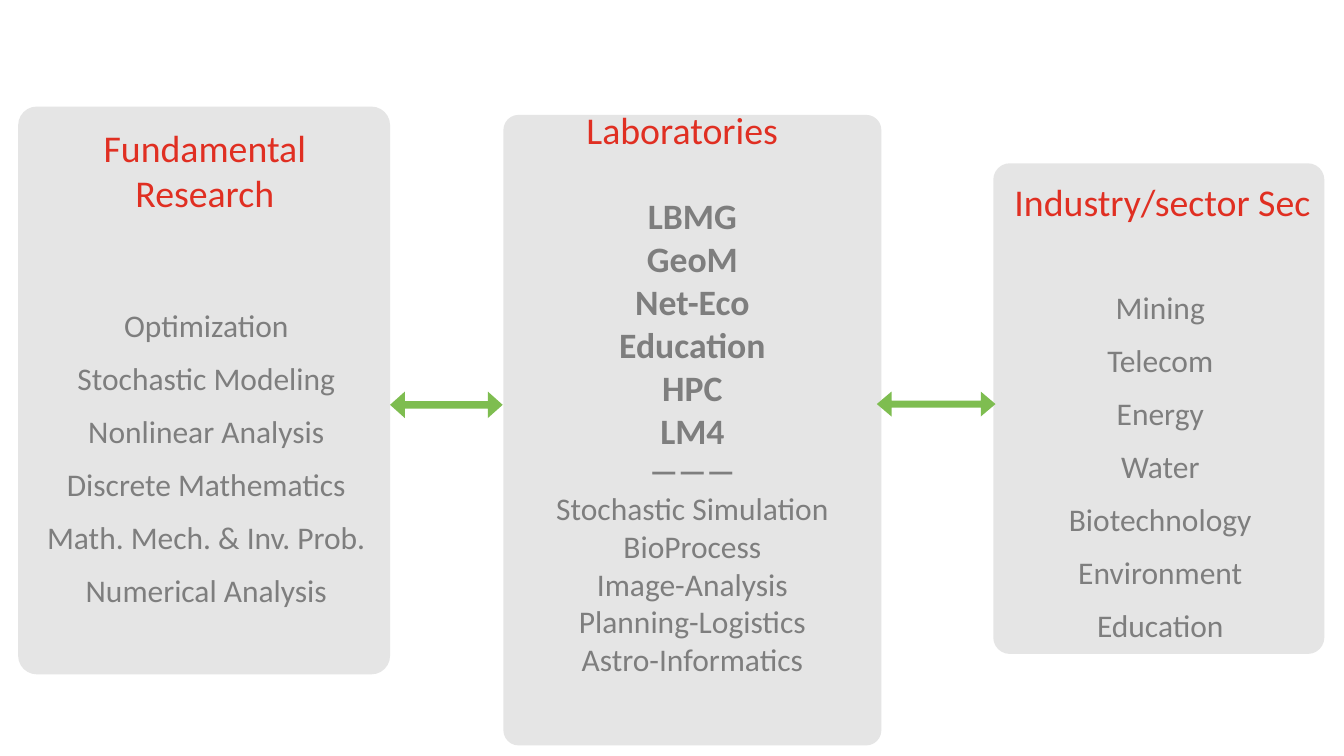
from dataclasses import dataclass
from pptx import Presentation, util as u
from pptx.dml.color import RGBColor
from pptx.enum import shapes, text


@dataclass(frozen=True)
class Theme:
    font: str = "Calibri"
    panel: str = "E5E5E5"
    head: str = "E02F22"
    body: str = "7E7E7E"
    arrow: str = "7EBD50"
    head_size: int = 36
    lab_size: int = 34
    body_size: int = 30


theme = Theme()
deck = Presentation()
deck.slide_width, deck.slide_height = u.Inches(17.78), u.Inches(10)
slide = deck.slides.add_slide(deck.slide_layouts[6])


def add_form(kind, area, color, adjust):
    form = slide.shapes.add_shape(kind, *map(u.Inches, area))
    form.shadow.inherit = False
    form.fill.solid()
    form.fill.fore_color.rgb = RGBColor.from_string(color)
    form.line.fill.background()
    for i, value in enumerate(adjust):
        form.adjustments[i] = value


def add_lines(area, lines, spacing=1.0):
    """Centred text; each line is (words, size, color, bold)."""
    frame = slide.shapes.add_textbox(*map(u.Inches, area)).text_frame
    frame.word_wrap = True
    frame.vertical_anchor = text.MSO_ANCHOR.TOP
    frame.margin_left = u.Inches(0.04)
    frame.margin_right = frame.margin_top = frame.margin_bottom = 0
    for i, (words, size, color, bold) in enumerate(lines):
        para = frame.paragraphs[0] if i == 0 else frame.add_paragraph()
        para.alignment = text.PP_ALIGN.CENTER
        para.line_spacing = spacing
        run = para.add_run()
        run.text = words
        run.font.name = theme.font
        run.font.size = u.Pt(size)
        run.font.bold = bold
        run.font.color.rgb = RGBColor.from_string(color)


# Line styles: size, color, bold
head = (theme.head_size, theme.head, False)
lab = (theme.lab_size, theme.body, True)
rule = (theme.body_size, theme.body, True)
body = (theme.body_size, theme.body, False)

fields = ["Optimization", "Stochastic Modeling", "Nonlinear Analysis",
          "Discrete Mathematics", "Math. Mech. & Inv. Prob.",
          "Numerical Analysis"]
labs = ["LBMG", "GeoM", "Net-Eco", "Education", "HPC", "LM4"]
topics = ["Stochastic Simulation", "BioProcess", "Image-Analysis",
          "Planning-Logistics", "Astro-Informatics"]
sectors = ["Mining", "Telecom", "Energy", "Water", "Biotechnology",
           "Environment", "Education"]

# Panels: box, corner, heading box, heading, list box, list, line spacing
panels = [
    ((0.24, 1.41, 4.92, 7.51), 0.05,
     (0.69, 1.65, 4, 1.6), ["Fundamental", "Research"],
     (0.36, 3.85, 4.7, 4.98), [(t, *body) for t in fields], 1.4),
    ((6.66, 1.52, 5, 8.34), 0.04,
     (6.97, 1.41, 4.07, 0.64), ["Laboratories"],
     (7.02, 2.57, 4.24, 7.12),
     [(t, *lab) for t in labs] + [("———", *rule)]
     + [(t, *body) for t in topics], 1.0),
    ((13.14, 2.16, 4.38, 6.49), 0.05,
     (13.38, 2.36, 3.96, 0.78), ["Industry/sector Sec"],
     (13.35, 3.61, 3.96, 4.92), [(t, *body) for t in sectors], 1.4),
]
for box, corner, top, title, area, lines, spacing in panels:
    add_form(shapes.MSO_SHAPE.ROUNDED_RECTANGLE, box, theme.panel, [corner])
    add_lines(area, lines, spacing)
    add_lines(top, [(t, *head) for t in title])

# Two-way arrows between the panels
for area, point in [((5.16, 5.18, 1.49, 0.35), 0.56),
                    ((11.6, 5.18, 1.57, 0.33), 0.59)]:
    add_form(shapes.MSO_SHAPE.LEFT_RIGHT_ARROW, area, theme.arrow,
             [0.28, point])

deck.save("out.pptx")
